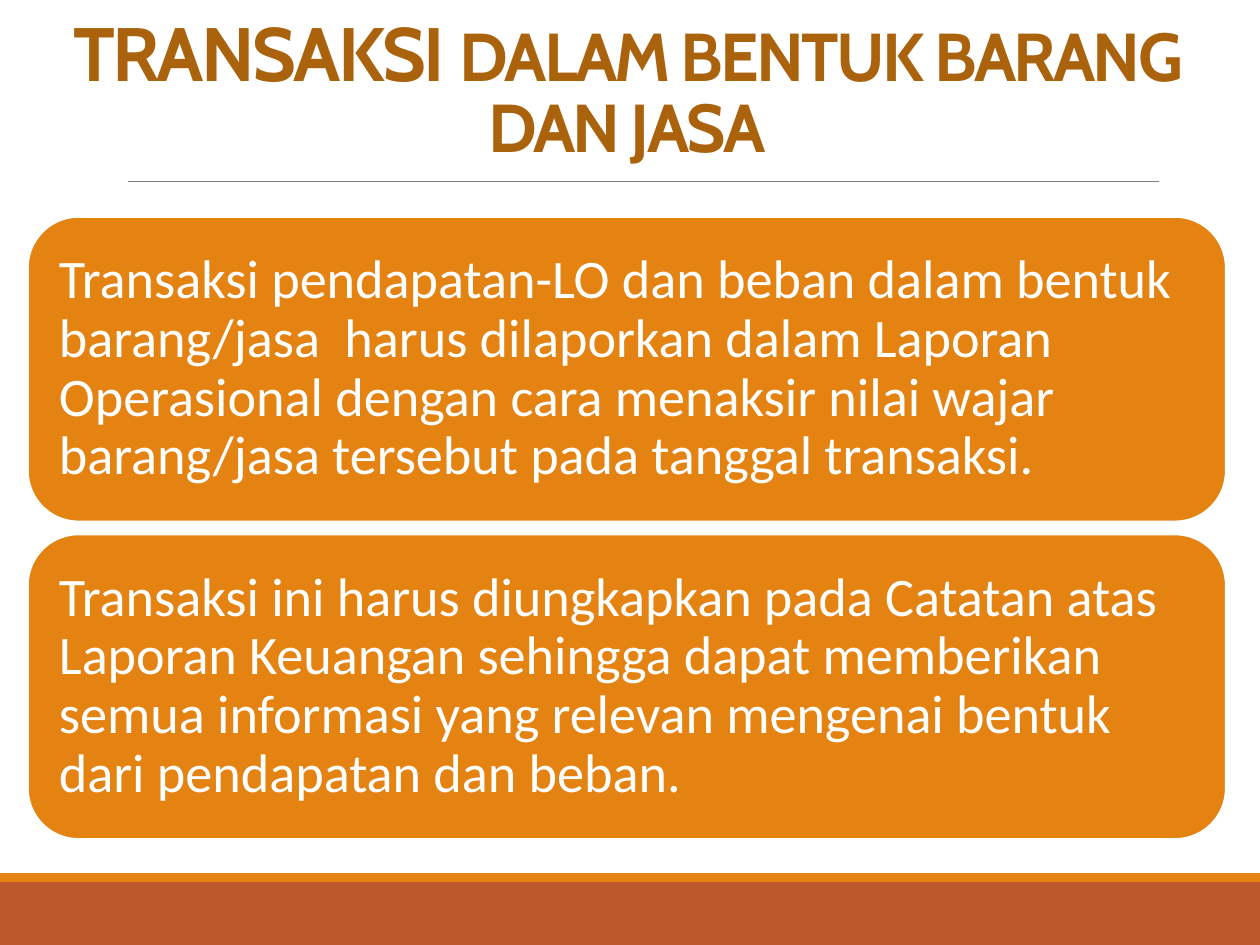
from pptx import Presentation
from pptx.dml.color import RGBColor
from pptx.enum.shapes import MSO_CONNECTOR, MSO_SHAPE
from pptx.enum.text import MSO_ANCHOR, MSO_AUTO_SIZE, PP_ALIGN
from pptx.oxml.ns import qn
from pptx.util import Inches, Pt

# Content
TITLE = [("TRANSAKSI ", 43.2), ("DALAM BENTUK BARANG DAN JASA", 38.7)]
CARDS = [
    "Transaksi pendapatan-LO dan beban dalam bentuk barang/jasa  harus "
    "dilaporkan dalam Laporan Operasional dengan cara menaksir nilai wajar "
    "barang/jasa tersebut pada tanggal transaksi.",
    "Transaksi ini harus diungkapkan pada Catatan atas Laporan Keuangan "
    "sehingga dapat memberikan semua informasi yang relevan mengenai bentuk "
    "dari pendapatan dan beban.",
]

ORANGE = RGBColor(0xE4, 0x83, 0x12)
RUST = RGBColor(0xBD, 0x58, 0x2C)
BROWN = RGBColor(0xAB, 0x62, 0x0D)
GRAY = RGBColor(0x80, 0x80, 0x80)
WHITE = RGBColor(0xFF, 0xFF, 0xFF)

# Layout in inches
SLIDE_W, SLIDE_H = 10, 7.5
LEFT, WIDTH = 0.22, 9.51
CARD_TOP, CARD_H, CARD_GAP = 1.72, 2.42, 0.1
BANDS = [(7, 0.5, RUST), (6.93, 0.07, ORANGE)]

prs = Presentation()
prs.slide_width, prs.slide_height = Inches(SLIDE_W), Inches(SLIDE_H)
s = prs.slides.add_slide(prs.slide_layouts[5])


def add_block(kind, x, y, w, h, color):
    sp = s.shapes.add_shape(kind, *map(Inches, (x, y, w, h)))
    sp.shadow.inherit = False
    sp.fill.solid()
    sp.fill.fore_color.rgb = color
    sp.line.fill.background()
    return sp


# Footer bands
for top, height, color in BANDS:
    add_block(MSO_SHAPE.RECTANGLE, 0, top, SLIDE_W, height, color)

# Rule under the title
rule = s.shapes.add_connector(MSO_CONNECTOR.STRAIGHT, *map(Inches, (1.02, 1.44, 9.2, 1.44)))
rule.line.color.rgb = GRAY
rule.line.width = Pt(0.5)
sp_pr = rule._element.spPr
sp_pr.append(sp_pr.makeelement(qn("a:effectLst"), {}))

# Title
title = s.shapes.title
title.left, title.top, title.width, title.height = map(Inches, (LEFT, 0.09, WIDTH, 1.3))
tf = title.text_frame
tf.word_wrap = True
tf.auto_size = MSO_AUTO_SIZE.NONE
tf.vertical_anchor = MSO_ANCHOR.MIDDLE
p = tf.paragraphs[0]
p.alignment = PP_ALIGN.CENTER
p.line_spacing = 0.85
for text, size in TITLE:
    r = p.add_run()
    r.text = text
    r.font.name, r.font.size, r.font.bold = "Cabin", Pt(size), True
    r.font.color.rgb = BROWN
    r.font._element.set("spc", "-150")

# Text cards
for i, text in enumerate(CARDS):
    top = CARD_TOP + i * (CARD_H + CARD_GAP)
    card = add_block(MSO_SHAPE.ROUNDED_RECTANGLE, LEFT, top, WIDTH, CARD_H, ORANGE)
    card.line.color.rgb = WHITE
    card.line.width = Pt(1.25)
    tf = card.text_frame
    tf.word_wrap = True
    tf.vertical_anchor = MSO_ANCHOR.MIDDLE
    tf.margin_left = tf.margin_right = tf.margin_top = tf.margin_bottom = Inches(0.13)
    p = tf.paragraphs[0]
    p.text = text
    p.alignment = PP_ALIGN.LEFT
    p.line_spacing = 0.9
    p.font.name, p.font.size = "Calibri", Pt(31)
    p.font.color.rgb = WHITE

prs.save("out.pptx")
